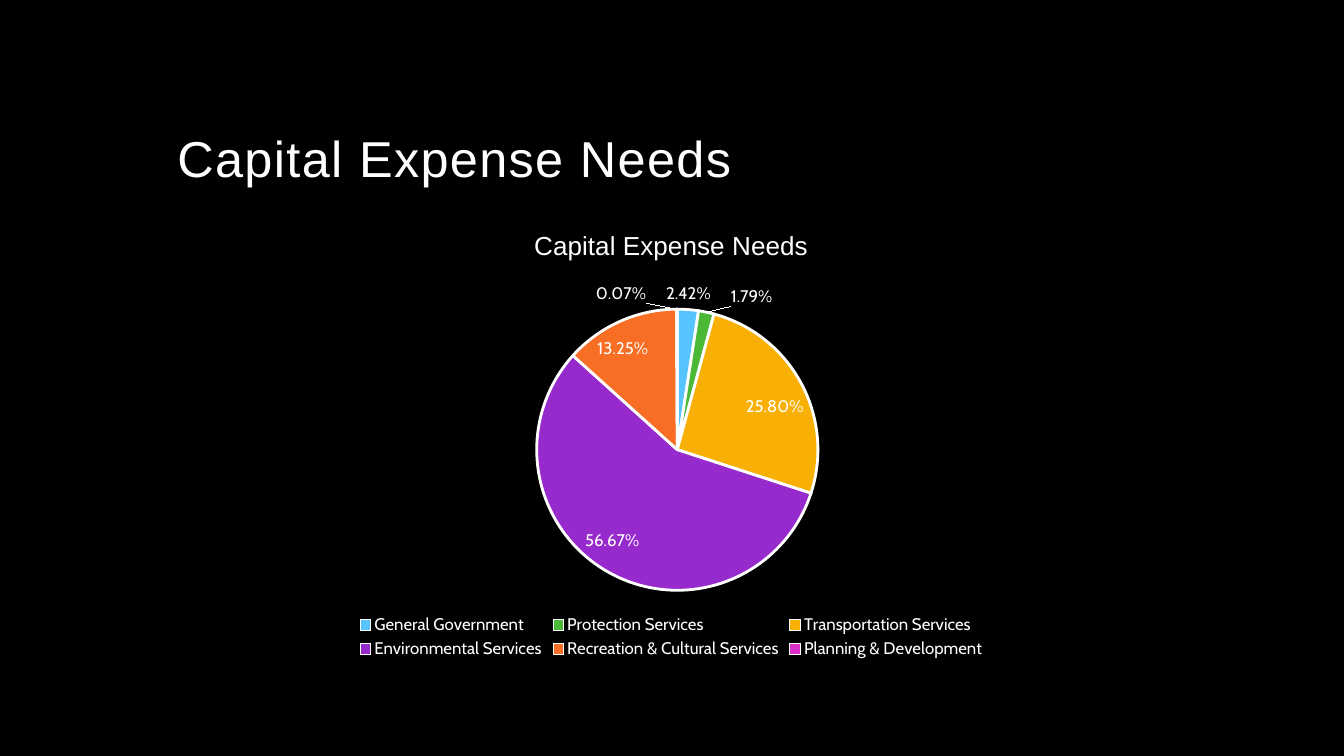
from lxml import etree
from pptx import Presentation
from pptx import util as u
from pptx.chart.data import CategoryChartData
from pptx.dml.color import RGBColor
from pptx.enum import chart as charts, text
from pptx.oxml import parse_xml
from pptx.oxml.ns import nsdecls, qn

COLORS = {"background": "000000", "text": "FFFFFF"}
HEADING_FONT, BODY_FONT = "Arial", "Cabin"

# category: (share of the total, slice colour)
EXPENSES = {
    "General Government": (0.0242, "56C5FF"),
    "Protection Services": (0.0179, "4BB836"),
    "Transportation Services": (0.258, "F8B004"),
    "Environmental Services": (0.5667, "972ACD"),
    "Recreation & Cultural Services": (0.1325, "F86E24"),
    "Planning & Development": (0.0007, "DB30C7"),
}


def rgb(value):
    return RGBColor.from_string(value)


def format_font(font, size, name=BODY_FONT, color=COLORS["text"], spacing=None):
    font.size, font.name, font.bold = u.Pt(size), name, False
    font.color.rgb = rgb(color)
    if spacing is not None:
        font._element.set("spc", str(int(spacing * 100)))


def write(frame, content, **style):
    """Put one formatted run into the first paragraph of a text frame."""
    paragraph = frame.paragraphs[0]
    run = paragraph.add_run()
    run.text = content
    format_font(run.font, **style)
    return paragraph


class SlideBuilder:
    """Places elements by shares of the slide's width and height."""

    def __init__(self, presentation):
        self.width = presentation.slide_width
        self.height = presentation.slide_height
        self.slide = presentation.slides.add_slide(presentation.slide_layouts[5])
        fill = self.slide.background.fill
        fill.solid()
        fill.fore_color.rgb = rgb(COLORS["background"])

    def box(self, left, top, width, height):
        return (int(left * self.width), int(top * self.height),
                int(width * self.width), int(height * self.height))

    def title(self, content, area):
        shape = self.slide.shapes.title
        shape.left, shape.top, shape.width, shape.height = self.box(*area)
        frame = shape.text_frame
        frame.word_wrap = True
        frame.vertical_anchor = text.MSO_ANCHOR.BOTTOM
        paragraph = write(frame, content, size=36, name=HEADING_FONT, spacing=1)
        paragraph.alignment = text.PP_ALIGN.LEFT
        paragraph.line_spacing = 0.9

    def pie(self, heading, values, area, plot_area):
        data = CategoryChartData(number_format="0.00%")
        data.categories = list(values)
        data.add_series("Series 1", [share for share, _ in values.values()])
        chart = self.slide.shapes.add_chart(
            charts.XL_CHART_TYPE.PIE, *self.box(*area), data).chart
        format_font(chart.font, 10)
        chart.has_title = True
        write(chart.chart_title.text_frame, heading, size=18.6, name=HEADING_FONT)
        chart.has_legend = True
        chart.legend.position = charts.XL_LEGEND_POSITION.BOTTOM
        chart.legend.include_in_layout = False
        format_font(chart.legend.font, 12)

        plot = chart.plots[0]
        plot.vary_by_categories = True
        for index, (_, color) in enumerate(values.values()):
            slice_format = plot.series[0].points[index].format
            slice_format.fill.solid()
            slice_format.fill.fore_color.rgb = rgb(color)
            slice_format.line.color.rgb = rgb(COLORS["text"])
            slice_format.line.width = u.Pt(2)
        self.label_slices(plot.series[0].data_labels)
        self.place_plot(chart, plot_area)

    def label_slices(self, labels):
        labels.show_value = True
        labels.show_percentage = False
        labels.number_format, labels.number_format_is_linked = "0.00%", False
        labels.position = charts.XL_LABEL_POSITION.BEST_FIT
        format_font(labels.font, 12)
        leader = labels._element.find(qn("c:showLeaderLines"))
        if leader is None:
            leader = etree.SubElement(labels._element, qn("c:showLeaderLines"))
        leader.set("val", "1")
        leader.addnext(parse_xml(
            f'<c:leaderLines {nsdecls("c", "a")}><c:spPr><a:ln w="9525"><a:solidFill>'
            f'<a:srgbClr val="{COLORS["text"]}"/></a:solidFill></a:ln></c:spPr></c:leaderLines>'))

    def place_plot(self, chart, plot_area):
        """Fix the pie's inner area, given as shares of the chart."""
        area = chart._chartSpace.chart.plotArea
        for old in area.findall(qn("c:layout")):
            area.remove(old)
        sides = "".join(f'<c:{side} val="{share}"/>'
                        for side, share in zip("xywh", plot_area))
        area.insert(0, parse_xml(
            f'<c:layout {nsdecls("c")}><c:manualLayout><c:layoutTarget val="inner"/>'
            f'<c:xMode val="edge"/><c:yMode val="edge"/>{sides}</c:manualLayout></c:layout>'))


def main():
    presentation = Presentation()
    presentation.slide_width = u.Inches(13.33)
    presentation.slide_height = u.Inches(7.5)
    builder = SlideBuilder(presentation)
    heading = "Capital Expense Needs"
    builder.title(heading, (0.1245, 0.056, 0.75, 0.2))
    builder.pie(heading, EXPENSES, (0.1245, 0.277, 0.75, 0.6),
                plot_area=(0.366, 0.22, 0.28, 0.62))
    presentation.save("out.pptx")


if __name__ == "__main__":
    main()
